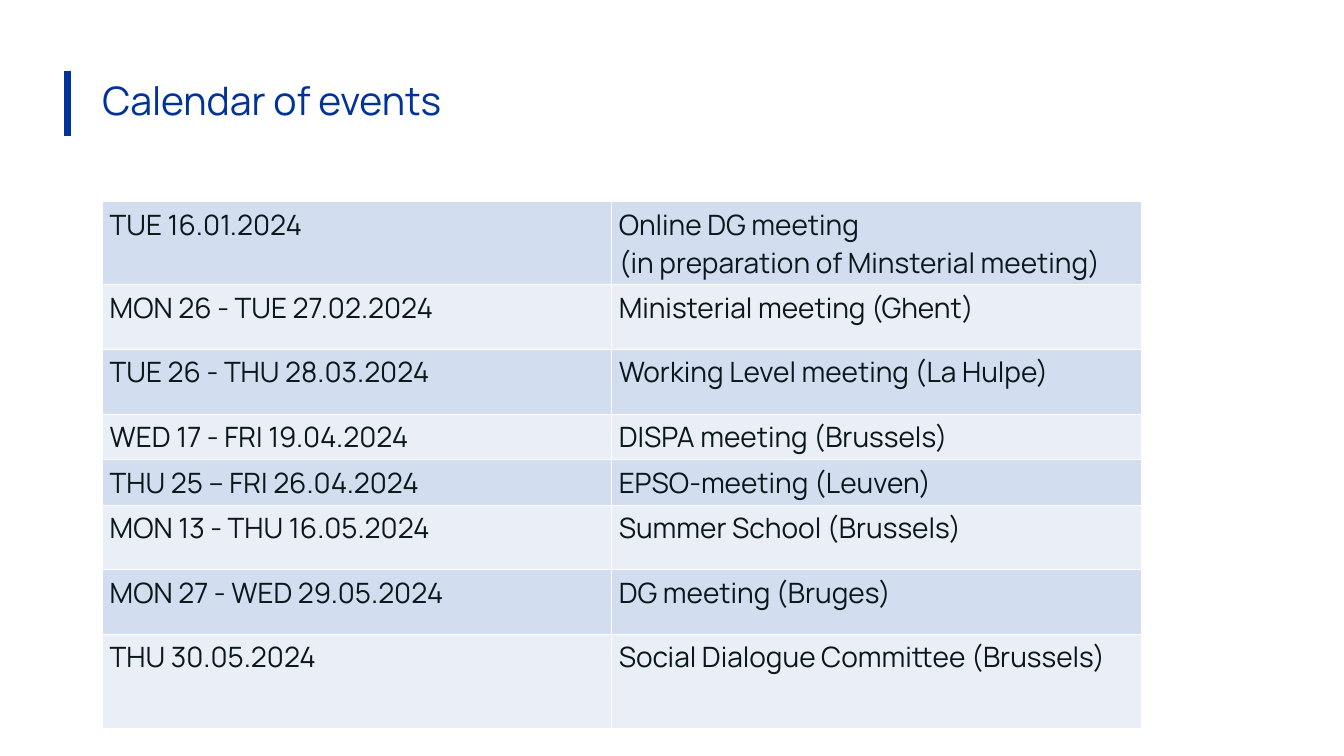
import pptx
import pptx.dml.color
import pptx.enum.shapes
import pptx.enum.text
import pptx.oxml
import pptx.oxml.ns
import pptx.util
from lxml import etree

Pt = pptx.util.Pt
COLORS = {"blue": "003399", "ink": "09181B", "dark_band": "D2DEEF",
          "light_band": "EAEFF7", "border": "FFFFFF"}
EVENTS = [
    # date, event lines, row height
    ("TUE 16.01.2024", "Online DG meeting\n(in preparation of Minsterial meeting)", 59.5),
    ("MON 26 - TUE 27.02.2024", "Ministerial meeting (Ghent)", 46.2),
    ("TUE 26 - THU 28.03.2024", "Working Level meeting (La Hulpe)", 46.2),
    ("WED 17 - FRI 19.04.2024", "DISPA meeting (Brussels)", 32.5),
    ("THU 25 – FRI 26.04.2024", "EPSO-meeting (Leuven)", 32.5),
    ("MON 13 - THU 16.05.2024", "Summer School (Brussels)", 46.2),
    ("MON 27 - WED 29.05.2024", "DG meeting (Bruges)", 46.2),
    ("THU 30.05.2024", "Social Dialogue Committee (Brussels)", 67),
]


def rgb(name):
    return pptx.dml.color.RGBColor.from_string(COLORS[name])


class Page:
    """Holds the text style and the slide being built."""

    def __init__(self, slide, font="Manrope"):
        self.shapes = slide.shapes
        self.font = font

    def style(self, frame, size, color):
        for para in frame.paragraphs:
            for span in para.runs:
                span.font.name = self.font
                span.font.size = Pt(size)
                span.font.color.rgb = rgb(color)

    def line(self, x1, y1, x2, y2, color, width):
        line = self.shapes.add_connector(
            pptx.enum.shapes.MSO_CONNECTOR.STRAIGHT, Pt(x1), Pt(y1), Pt(x2), Pt(y2))
        line.line.color.rgb = rgb(color)
        line.line.width = Pt(width)
        etree.SubElement(line._element.spPr, pptx.oxml.ns.qn("a:effectLst"))

    def title(self, text, left, top, width, height):
        box = self.shapes.add_textbox(Pt(left), Pt(top), Pt(width), Pt(height))
        frame = box.text_frame
        frame.word_wrap = True
        frame.vertical_anchor = pptx.enum.text.MSO_ANCHOR.MIDDLE
        frame.text = text
        frame.paragraphs[0].line_spacing = 0.9
        self.style(frame, 28, "blue")

    def cell(self, cell, text, band):
        cell.margin_left = cell.margin_right = Pt(5)
        cell.margin_top = cell.margin_bottom = Pt(2.5)
        cell.text_frame.text = text
        self.style(cell.text_frame, 20, "ink")
        cell.fill.solid()
        cell.fill.fore_color.rgb = rgb(band)
        # Borders stand before the fill
        properties = cell._tc.get_or_add_tcPr()
        for index, side in enumerate(("lnL", "lnR", "lnT", "lnB")):
            properties.insert(index, pptx.oxml.parse_xml(
                f'<a:{side} {pptx.oxml.ns.nsdecls("a")} w="{Pt(1)}"><a:solidFill>'
                f'<a:srgbClr val="{COLORS["border"]}"/></a:solidFill></a:{side}>'))

    def table(self, events, left, top, widths):
        height = sum(event[-1] for event in events)
        table = self.shapes.add_table(len(events), len(widths), Pt(left), Pt(top),
                                      Pt(sum(widths)), Pt(height)).table
        table.first_row = table.horz_banding = False
        for column, width in zip(table.columns, widths):
            column.width = Pt(width)
        for row, (*texts, row_height) in enumerate(events):
            table.rows[row].height = Pt(row_height)
            band = "light_band" if row % 2 else "dark_band"
            for column, text in enumerate(texts):
                self.cell(table.cell(row, column), text, band)


def main():
    deck = pptx.Presentation()
    deck.slide_width, deck.slide_height = Pt(960), Pt(540)
    page = Page(deck.slides.add_slide(deck.slide_layouts[6]))

    # Title with accent bar
    page.line(48.3, 50.5, 48.3, 97, "blue", 5)
    page.title("Calendar of events", 66, 48, 828, 50.4)

    # Calendar
    page.table(EVENTS, 73.4, 144, [363.6, 378.8])
    deck.save("out.pptx")


if __name__ == "__main__":
    main()
